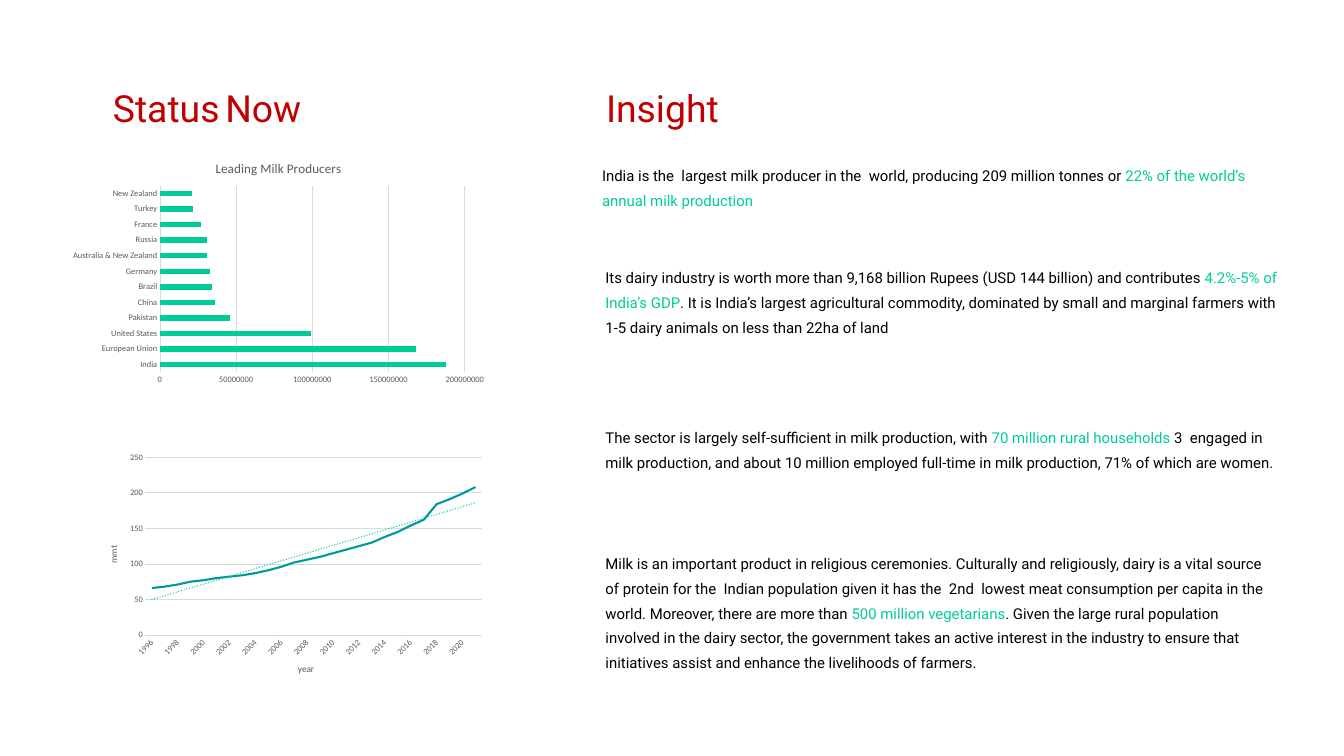
from lxml import etree
from pptx import Presentation
from pptx.chart.data import CategoryChartData
from pptx.dml.color import RGBColor
from pptx.enum.chart import XL_CHART_TYPE, XL_TICK_MARK
from pptx.enum.text import MSO_ANCHOR, MSO_AUTO_SIZE, PP_ALIGN
from pptx.oxml import parse_xml
from pptx.oxml.ns import nsdecls, qn
from pptx.util import Inches, Pt

BAR, LINE = XL_CHART_TYPE.BAR_CLUSTERED, XL_CHART_TYPE.LINE
NO_TICK = XL_TICK_MARK.NONE
TOP, LEFT = MSO_ANCHOR.TOP, PP_ALIGN.LEFT
GROW = MSO_AUTO_SIZE.SHAPE_TO_FIT_TEXT

RED, GREEN, TEAL = "C00000", "00CC99", "009999"
BLACK, GREY, PALE = "000000", "595959", "D9D9D9"


def color(code):
    return RGBColor.from_string(code)


def style(font, size, code, name):
    font.size, font.name, font.bold = Pt(size), name, False
    font.color.rgb = color(code)


deck = Presentation()
deck.slide_width, deck.slide_height = Inches(20), Inches(11.25)
column, row = deck.slide_width / 100, deck.slide_height / 100
page = deck.slides.add_slide(deck.slide_layouts[5])

insights = [
    (44.8, 21.2, 51, 6.3, [
        ("India is the  largest milk producer in the  world, producing 209 million tonnes or ", BLACK),
        ("22% of the world’s annual milk production", GREEN)]),
    (45.05, 34.7, 50.8, 9.5, [
        ("Its dairy industry is worth more than 9,168 billion Rupees (USD 144 billion) and contributes ", BLACK),
        ("4.2%-5% of India’s GDP", GREEN),
        (". It is India’s largest agricultural commodity, dominated by small and marginal farmers "
         "with 1-5 dairy animals on less than 22ha of land", BLACK)]),
    (45.05, 55.8, 50.2, 9.6, [
        ("The sector is largely self-sufficient in milk production, with ", BLACK),
        ("70 million rural households ", GREEN),
        ("3  engaged in milk production, and about 10 million employed full-time in milk production, "
         "71% of which are women.", BLACK)]),
    (45.05, 72.5, 49.05, 19.3, [
        ("Milk is an important product in religious ceremonies. Culturally and religiously, dairy is a vital "
         "source of protein for the  Indian population given it has the  2nd  lowest meat consumption per "
         "capita in the world. Moreover, there are more than ", BLACK),
        ("500 million vegetarians", GREEN),
        (". Given the large rural population involved in the dairy sector, the government takes an active "
         "interest in the industry to ensure that initiatives assist and enhance the livelihoods of farmers.",
         BLACK)]),
]
for left, top, width, height, spans in insights:
    box = page.shapes.add_textbox(int(left * column), int(top * row), int(width * column), int(height * row))
    frame = box.text_frame
    frame.word_wrap, frame.auto_size = True, GROW
    frame.margin_left = frame.margin_right = frame.margin_top = frame.margin_bottom = 0
    para = frame.paragraphs[0]
    para.line_spacing = Pt(26.4)
    para.font.size, para.font.name = Pt(16), "Roboto"
    for text, code in spans:
        span = para.add_run()
        span.text = text
        span.font.color.rgb = color(code)

production = [66, 68, 71, 75, 77, 80, 82, 84, 87, 91, 96, 102, 106,
              110, 115, 120, 125, 130, 138, 145, 154, 162, 184, 191, 199, 208]
producers = {
    "India": 188, "European Union": 168, "United States": 99, "Pakistan": 46,
    "China": 36, "Brazil": 34, "Germany": 33, "Australia & New Zealand": 31,
    "Russia": 31, "France": 27, "Turkey": 22, "New Zealand": 21,
}
charts = [
    (LINE, 7, 59.2, 29.45, 31.9, [str(1996 + n) for n in range(len(production))], production, 250, 50),
    (BAR, 4.8, 19.65, 31.85, 31.9, list(producers), [n * 1000000 for n in producers.values()],
     200000000, 50000000),
]
drawn = {}
for kind, left, top, width, height, names, values, maximum, step in charts:
    data = CategoryChartData(number_format="0")
    data.categories = names
    data.add_series("Series 1", values)
    chart = page.shapes.add_chart(kind, int(left * column), int(top * row),
                                  int(width * column), int(height * row), data).chart
    style(chart.font, 10, BLACK, "Calibri")
    chart.has_legend = chart.has_title = False
    chart.plots[0].vary_by_categories = False
    for axis in (chart.category_axis, chart.value_axis):
        axis.major_tick_mark = axis.minor_tick_mark = NO_TICK
        style(axis.tick_labels.font, 9, GREY, "Calibri")
    chart.category_axis.format.line.color.rgb = color(PALE)
    chart.category_axis.format.line.width = Pt(0.75)
    scale = chart.value_axis
    scale.minimum_scale, scale.maximum_scale, scale.major_unit = 0, maximum, step
    scale.format.line.fill.background()
    scale.major_gridlines.format.line.color.rgb = color(PALE)
    scale.major_gridlines.format.line.width = Pt(0.75)
    drawn[kind] = chart

bars = drawn[BAR]
bars.plots[0].gap_width = 182
bars.plots[0].series[0].format.fill.solid()
bars.plots[0].series[0].format.fill.fore_color.rgb = color(GREEN)
bars.has_title = True
bars.chart_title.include_in_layout = False
bars.chart_title.text_frame.text = "Leading Milk Producers"
style(bars.chart_title.text_frame.paragraphs[0].font, 14, GREY, "Calibri")

trend = drawn[LINE]
for axis, text, turn in ((trend.category_axis, "year", 0), (trend.value_axis, "mmt", -90)):
    frame = axis.axis_title.text_frame
    frame.text = text
    style(frame.paragraphs[0].font, 10, GREY, "Calibri")
    frame._txBody.bodyPr.set("rot", str(turn * 60000))
years = trend.category_axis._element
years.find(qn("c:txPr")).find(qn("a:bodyPr")).set("rot", str(-45 * 60000))
skip = etree.Element(qn("c:tickLblSkip"), val="2")
years.find(qn("c:noMultiLvlLbl")).addprevious(skip)
series = trend.plots[0].series[0]
series.smooth = False
series.format.line.color.rgb = color(TEAL)
series.format.line.width = Pt(2.25)
series._element.find(qn("c:cat")).addprevious(parse_xml(
    f'<c:trendline {nsdecls("c", "a")}><c:spPr><a:ln w="{Pt(1.5)}" cap="rnd"><a:solidFill>'
    f'<a:srgbClr val="{GREEN}"/></a:solidFill><a:prstDash val="sysDot"/></a:ln></c:spPr>'
    '<c:trendlineType val="linear"/><c:dispRSqr val="0"/><c:dispEq val="0"/></c:trendline>'))

heading = page.shapes.title
insight = page.shapes.add_textbox(0, 0, 0, 0)
titles = [
    (heading, 7.9, [("Status", 40, RED), (" ", 25, BLACK), ("Now", 40, RED)]),
    (insight, 44.6, [("Insight", 40, RED)]),
]
for box, left, spans in titles:
    box.left, box.top = int(left * column), int(6.4 * row)
    box.width, box.height = int(26.25 * column), int(10.2 * row)
    frame = box.text_frame
    frame.word_wrap, frame.auto_size, frame.vertical_anchor = True, GROW, TOP
    para = frame.paragraphs[0]
    para.alignment, para.line_spacing = LEFT, Pt(84)
    para.font.name = "Roboto"
    for text, size, code in spans:
        span = para.add_run()
        span.text = text
        span.font.size = Pt(size)
        span.font.color.rgb = color(code)

deck.save("out.pptx")
